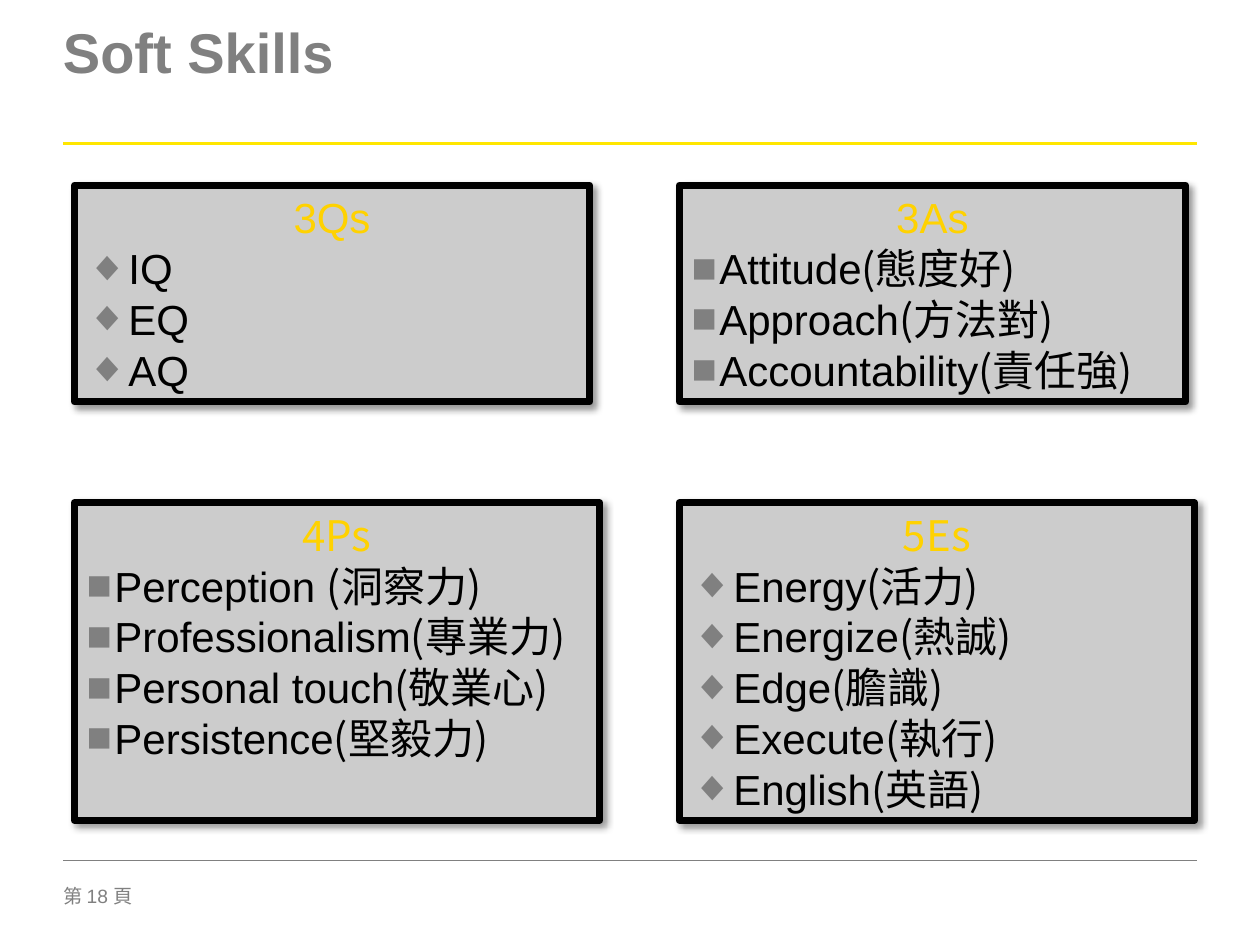
"""Build the Soft Skills slide with four skill boxes."""
from lxml import etree
from pptx import Presentation
from pptx.dml.color import RGBColor
from pptx.enum.shapes import MSO_CONNECTOR, MSO_SHAPE
from pptx.enum.text import MSO_ANCHOR, PP_ALIGN
from pptx.oxml.ns import qn
from pptx.util import Inches, Pt

LINE, RECT = MSO_CONNECTOR.STRAIGHT, MSO_SHAPE.RECTANGLE
TOP, CENTER, LEFT = MSO_ANCHOR.TOP, PP_ALIGN.CENTER, PP_ALIGN.LEFT
ARIAL, CJK = "Arial", "Noto Sans CJK SC"
GREY, YELLOW, GOLD = "808080", "FFE600", "FFD200"


def rgb(color):
    return RGBColor.from_string(color)


def add_run(p, text, font=ARIAL, size=24, color="000000", bold=False):
    r = p.add_run()
    r.text = text
    r.font.name, r.font.size, r.font.bold = font, Pt(size), bold
    r.font.color.rgb = rgb(color)
    etree.SubElement(r._r.get_or_add_rPr(), qn("a:ea"), typeface=font)


prs = Presentation()
prs.slide_width, prs.slide_height = Inches(10), Inches(7.5)
s = prs.slides.add_slide(prs.slide_layouts[6])

texts = [
    (0.22, 9, 0.94, 0.85, [("Soft Skills", ARIAL)], 32, True),
    (7.02, 0.79, 0.22, 1.0, [("第 ", CJK), ("18 ", ARIAL), ("頁", CJK)], 11, False),
]
for y, w, h, spacing, runs, size, bold in texts:
    tf = s.shapes.add_textbox(Inches(0.5), Inches(y), Inches(w), Inches(h)).text_frame
    tf.margin_left = tf.margin_right = tf.margin_top = tf.margin_bottom = 0
    tf.word_wrap = bold
    p = tf.paragraphs[0]
    p.line_spacing = spacing
    for text, font in runs:
        add_run(p, text, font=font, size=size, color=GREY, bold=bold)

for y, color, width in [(1.14, YELLOW, 1.5), (6.83, GREY, 0.25)]:
    sp = s.shapes.add_connector(LINE, Inches(0.5), Inches(y), Inches(9.5), Inches(y))
    sp.line.color.rgb, sp.line.width = rgb(color), Pt(width)
    etree.SubElement(sp._element.spPr, qn("a:effectLst"))

cols, rows = (0.59, 5.39), ((1.47, 1.72), (3.99, 2.52))
indents = {"■": 0.22, "◆": 0.31}
boxes = [
    (1, 0, 4.02, "3As", ARIAL, "■",
     [("Attitude", "(態度好)"), ("Approach", "(方法對)"), ("Accountability", "(責任強)")]),
    (0, 1, 4.17, "4Ps", CJK, "■",
     [("Perception ", "(洞察力)"), ("Professionalism", "(專業力)"),
      ("Personal touch", "(敬業心)"), ("Persistence", "(堅毅力)")]),
    (0, 0, 4.09, "3Qs", ARIAL, "◆", [("IQ", ""), ("EQ", ""), ("AQ", "")]),
    (1, 1, 4.09, "5Es", CJK, "◆",
     [("Energy", "(活力)"), ("Energize", "(熱誠)"), ("Edge", "(膽識)"),
      ("Execute", "(執行)"), ("English", "(英語)")]),
]
for col, row, w, heading, font, bullet, items in boxes:
    y, h = rows[row]
    sp = s.shapes.add_shape(RECT, Inches(cols[col]), Inches(y), Inches(w), Inches(h))
    sp.fill.solid()
    sp.fill.fore_color.rgb = rgb("CCCCCC")
    sp.line.color.rgb, sp.line.width = rgb("000000"), Pt(4)
    sp.shadow.inherit = False
    effects = sp._element.spPr.find(qn("a:effectLst"))
    shadow = etree.SubElement(effects, qn("a:outerShdw"), blurRad=str(Pt(4)),
                              dist=str(Pt(3)), dir="2700000", rotWithShape="0")
    black = etree.SubElement(shadow, qn("a:srgbClr"), val="000000")
    etree.SubElement(black, qn("a:alpha"), val="40000")

    tf = sp.text_frame
    tf.word_wrap, tf.vertical_anchor = True, TOP
    p = tf.paragraphs[0]
    p.alignment, p.line_spacing = CENTER, Pt(29)
    add_run(p, heading, font=font, color=GOLD)
    for word, meaning in items:
        p = tf.add_paragraph()
        p.alignment, p.line_spacing = LEFT, Pt(29)
        pPr = p._p.get_or_add_pPr()
        indent = Inches(indents[bullet])
        pPr.set("marL", str(indent))
        pPr.set("indent", str(-indent))
        bu_color = etree.SubElement(pPr, qn("a:buClr"))
        etree.SubElement(bu_color, qn("a:srgbClr"), val=GREY)
        etree.SubElement(pPr, qn("a:buFont"), typeface=ARIAL)
        etree.SubElement(pPr, qn("a:buChar"), char=bullet)
        add_run(p, word)
        if meaning:
            add_run(p, meaning, font=CJK)

prs.save("out.pptx")
